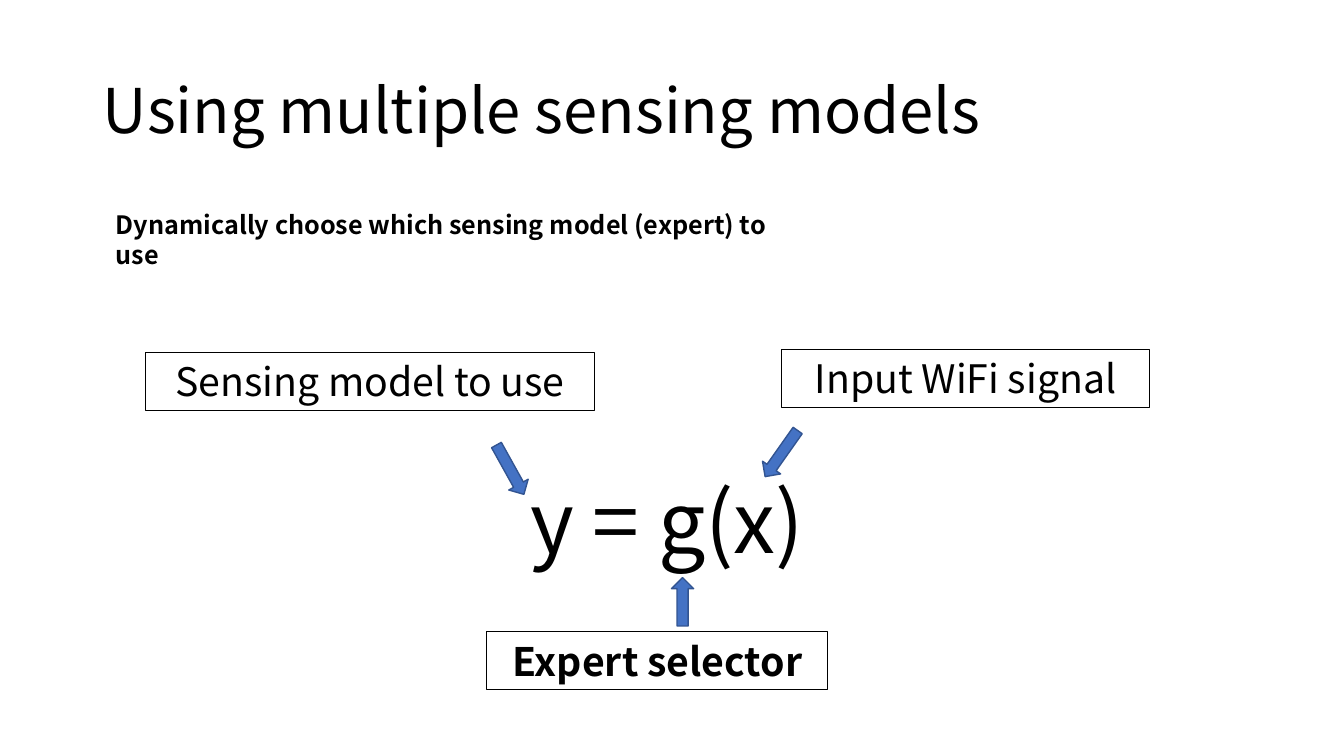
from pptx import Presentation
from pptx.dml.color import RGBColor
from pptx.enum.shapes import MSO_SHAPE
from pptx.enum.text import MSO_ANCHOR, PP_ALIGN
from pptx.util import Inches, Pt

FONT = "Noto Sans CJK SC"
BLACK = RGBColor(0x00, 0x00, 0x00)
BLUE = RGBColor(0x44, 0x72, 0xC4)
NAVY = RGBColor(0x32, 0x54, 0x91)
RECT = MSO_SHAPE.RECTANGLE
ARROW = MSO_SHAPE.RIGHT_ARROW
TOP, MIDDLE = MSO_ANCHOR.TOP, MSO_ANCHOR.MIDDLE
LEFT, CENTER = PP_ALIGN.LEFT, PP_ALIGN.CENTER


def write(shape, text, size, bold=False, align=LEFT, anchor=TOP, wrap=True):
    frame = shape.text_frame
    frame.word_wrap = wrap
    frame.vertical_anchor = anchor
    para = frame.paragraphs[0]
    para.alignment = align
    run = para.add_run()
    run.text = text
    run.font.name = FONT
    run.font.size = Pt(size)
    run.font.bold = bold
    run.font.color.rgb = BLACK
    return para


def draw(kind, left, top, width, height, color, weight):
    shape = slide.shapes.add_shape(
        kind, Inches(left), Inches(top), Inches(width), Inches(height))
    shape.shadow.inherit = False
    shape.line.color.rgb = color
    shape.line.width = Pt(weight)
    return shape


prs = Presentation()
prs.slide_width, prs.slide_height = Inches(13.33), Inches(7.5)
slide = prs.slides.add_slide(prs.slide_layouts[5])

title = slide.shapes.title
title.left, title.top = Inches(0.92), Inches(0.4)
title.width, title.height = Inches(11.5), Inches(1.45)
write(title, "Using multiple sensing models", 44, anchor=MIDDLE).line_spacing = 0.9

claim = slide.shapes.add_textbox(Inches(1.05), Inches(2.03), Inches(6.7), Inches(0.4))
write(claim, "Dynamically choose which sensing model (expert) to use", 18, bold=True)

formula = slide.shapes.add_textbox(
    Inches(5.16), Inches(4.61), Inches(2.96), Inches(1.11))
write(formula, "y = g(x)", 60, wrap=False)

labels = [
    ("Sensing model to use", 1.44, 3.5, 4.46, False),
    ("Input WiFi signal", 7.75, 3.47, 3.65, False),
    ("Expert selector", 4.83, 6.27, 3.38, True),
]
for text, left, top, width, bold in labels:
    box = draw(RECT, left, top, width, 0.57, BLACK, 0.75)
    box.fill.background()
    write(box, text, 28, bold=bold, align=CENTER)

arrows = [
    (4.78, 4.55, 0.56, 60.9),
    (6.53, 5.86, 0.48, 270),
    (7.47, 4.39, 0.56, 125.2),
]
for left, top, width, angle in arrows:
    arrow = draw(ARROW, left, top, width, 0.22, NAVY, 1)
    arrow.fill.solid()
    arrow.fill.fore_color.rgb = BLUE
    arrow.rotation = angle

prs.save("out.pptx")
